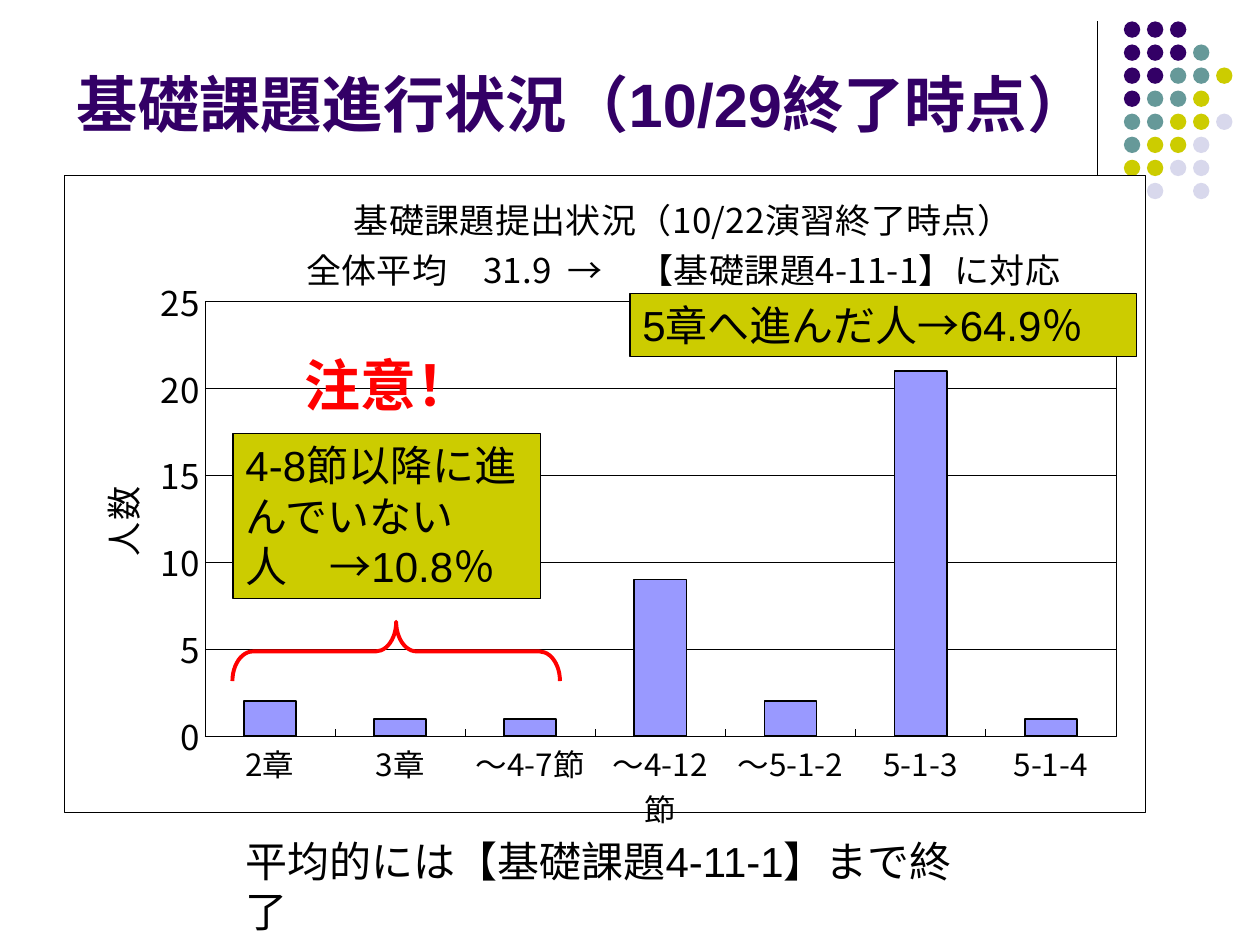
from lxml import etree
from pptx import Presentation
from pptx import util as u
from pptx.chart.data import CategoryChartData
from pptx.dml.color import RGBColor
from pptx.enum import chart as ch, shapes, text
from pptx.oxml import parse_xml
from pptx.oxml.ns import nsdecls, qn

BLACK = RGBColor(0, 0, 0)
RED = RGBColor(0xFF, 0, 0)
PURPLE = RGBColor(0x33, 0, 0x66)
TEAL = RGBColor(0x66, 0x99, 0x99)
OLIVE = RGBColor(0xCC, 0xCC, 0)
PALE = RGBColor(0xD8, 0xD8, 0xEC)
BAR = RGBColor(0x99, 0x99, 0xFF)
CJK = "Noto Sans CJK JP"

DOTS = ["PPP", "PPPT", "PPTTO", "PTTO", "TTOOL", "TOOL", "OOLL", " L L"]
TONES = {"P": PURPLE, "T": TEAL, "O": OLIVE, "L": PALE}


def box(*nums):
    return [u.Inches(n) for n in nums]


def style(font, size, color=BLACK, name="Arial", bold=False):
    font.size, font.name, font.bold = u.Pt(size), name, bold
    font.color.rgb = color
    ea = parse_xml(f'<a:ea {nsdecls("a")} typeface="{CJK}"/>')
    font._element.find(qn("a:latin")).addnext(ea)


def stroke(line, color, width):
    line.color.rgb = color
    line.width = u.Pt(width)


def add_dots(slide):
    for row, marks in enumerate(DOTS):
        for col, mark in enumerate(marks):
            if mark == " ":
                continue
            place = box(8.92 + col * 0.183, 0.17 + row * 0.183, 0.13, 0.13)
            dot = slide.shapes.add_shape(shapes.MSO_SHAPE.OVAL, *place)
            dot.shadow.inherit = False
            dot.fill.solid()
            dot.fill.fore_color.rgb = TONES[mark]
            dot.line.fill.background()


def add_rule(slide):
    rule = slide.shapes.add_connector(
        shapes.MSO_CONNECTOR.STRAIGHT, *box(8.71, 0.17, 8.71, 1.83))
    stroke(rule.line, BLACK, 0.75)
    etree.SubElement(rule._element.spPr, qn("a:effectLst"))


def add_title(slide, words):
    title = slide.shapes.title
    title.left, title.top, title.width, title.height = box(0.51, 0.21, 8.25, 0.95)
    frame = title.text_frame
    frame.auto_size = text.MSO_AUTO_SIZE.NONE
    frame.vertical_anchor = text.MSO_ANCHOR.BOTTOM
    para = frame.paragraphs[0]
    para.alignment = text.PP_ALIGN.LEFT
    run = para.add_run()
    run.text = words
    style(run.font, 35, PURPLE, bold=True)


def add_note(slide, words, place, size=24, color=BLACK, bold=False, fill=None):
    note = slide.shapes.add_textbox(*box(*place))
    if fill is not None:
        note.fill.solid()
        note.fill.fore_color.rgb = fill
        stroke(note.line, BLACK, 0.75)
    frame = note.text_frame
    frame.word_wrap = True
    frame.auto_size = text.MSO_AUTO_SIZE.SHAPE_TO_FIT_TEXT
    run = frame.paragraphs[0].add_run()
    run.text = words
    style(run.font, size, color, bold=bold)


def add_brace(slide):
    brace = slide.shapes.add_shape(
        shapes.MSO_SHAPE.RIGHT_BRACE, *box(2.91, 3.87, 0.47, 2.6))
    brace.rotation = 270
    brace.adjustments[0] = 0.347
    brace.shadow.inherit = False
    brace.fill.background()
    stroke(brace.line, RED, 2.25)


def layout(x, y, w=None, h=None):
    """Manual chart layout in fractions of the chart area."""
    parts = ['<c:layoutTarget val="inner"/>'] if w else []
    parts += [f'<c:{k}Mode val="edge"/>' for k in "xy"]
    parts += [f'<c:{k} val="{v}"/>' for k, v in zip("xywh", (x, y, w, h)) if v]
    return parse_xml(f'<c:layout {nsdecls("c")}><c:manualLayout>'
                     f'{"".join(parts)}</c:manualLayout></c:layout>')


def panel():
    """White area with a thin black border."""
    return parse_xml(
        f'<c:spPr {nsdecls("c", "a")}><a:solidFill><a:srgbClr val="FFFFFF"/>'
        '</a:solidFill><a:ln w="3175"><a:solidFill><a:srgbClr val="000000"/>'
        '</a:solidFill></a:ln></c:spPr>')


def caption(title, lines, x, y):
    frame = title.text_frame
    for i, words in enumerate(lines):
        para = frame.add_paragraph() if i else frame.paragraphs[0]
        run = para.add_run()
        run.text = words
        style(run.font, 20, name=CJK)
    node = title._element
    for old in node.findall(qn("c:layout")):
        node.remove(old)
    node.find(qn("c:tx")).addnext(layout(x, y))


def format_axis(axis, size):
    style(axis.tick_labels.font, size, name=CJK)
    stroke(axis.format.line, BLACK, 0.25)
    axis.major_tick_mark = ch.XL_TICK_MARK.INSIDE
    axis.minor_tick_mark = ch.XL_TICK_MARK.NONE


def add_counts(slide):
    data = CategoryChartData()
    data.categories = ["2章", "3章", "～4-7節", "～4-12節", "～5-1-2", "5-1-3", "5-1-4"]
    data.add_series("Series 1", [2, 1, 1, 9, 2, 21, 1])
    chart = slide.shapes.add_chart(
        ch.XL_CHART_TYPE.COLUMN_CLUSTERED, *box(0.51, 1.39, 8.58, 5.2), data).chart
    style(chart.font, 12, name=CJK)
    chart.has_legend = False
    chart.has_title = True
    caption(chart.chart_title, ["基礎課題提出状況（10/22演習終了時点）",
                                "全体平均　31.9  →　【基礎課題4-11-1】に対応"], 0.22, 0.02)

    format_axis(chart.category_axis, 18)
    count = chart.value_axis
    format_axis(count, 20)
    count.minimum_scale, count.maximum_scale, count.major_unit = 0, 25, 5
    stroke(count.major_gridlines.format.line, BLACK, 0.25)
    count.has_title = True
    caption(count.axis_title, ["人数"], 0.02, 0.48)
    turn = count.axis_title.text_frame._txBody.bodyPr
    turn.set("rot", "-5400000")
    turn.set("vert", "horz")

    plot = chart.plots[0]
    plot.gap_width = 150
    plot.vary_by_categories = False
    bars = plot.series[0].format
    bars.fill.solid()
    bars.fill.fore_color.rgb = BAR
    stroke(bars.line, BLACK, 1)

    root = chart._chartSpace.chart
    area = root.plotArea
    for old in area.findall(qn("c:layout")):
        area.remove(old)
    area.insert(0, layout(0.13, 0.198, 0.843, 0.682))
    area.append(panel())
    root.addnext(panel())


def main():
    deck = Presentation()
    deck.slide_width, deck.slide_height = box(10, 7.5)
    slide = deck.slides.add_slide(deck.slide_layouts[5])
    add_rule(slide)
    add_dots(slide)
    add_counts(slide)
    add_title(slide, "基礎課題進行状況（10/29終了時点）")
    add_note(slide, "4-8節以降に進んでいない人　→10.8％", (1.85, 3.44, 2.44, 1.31), fill=OLIVE)
    add_note(slide, "注意！", (2.32, 2.73, 1.57, 0.64), 32, RED, True)
    add_note(slide, "5章へ進んだ人→64.9％", (5, 2.33, 4.02, 0.5), fill=OLIVE)
    add_note(slide, "平均的には【基礎課題4-11-1】まで終了", (1.85, 6.58, 5.91, 0.5))
    add_brace(slide)
    deck.save("out.pptx")


if __name__ == "__main__":
    main()
